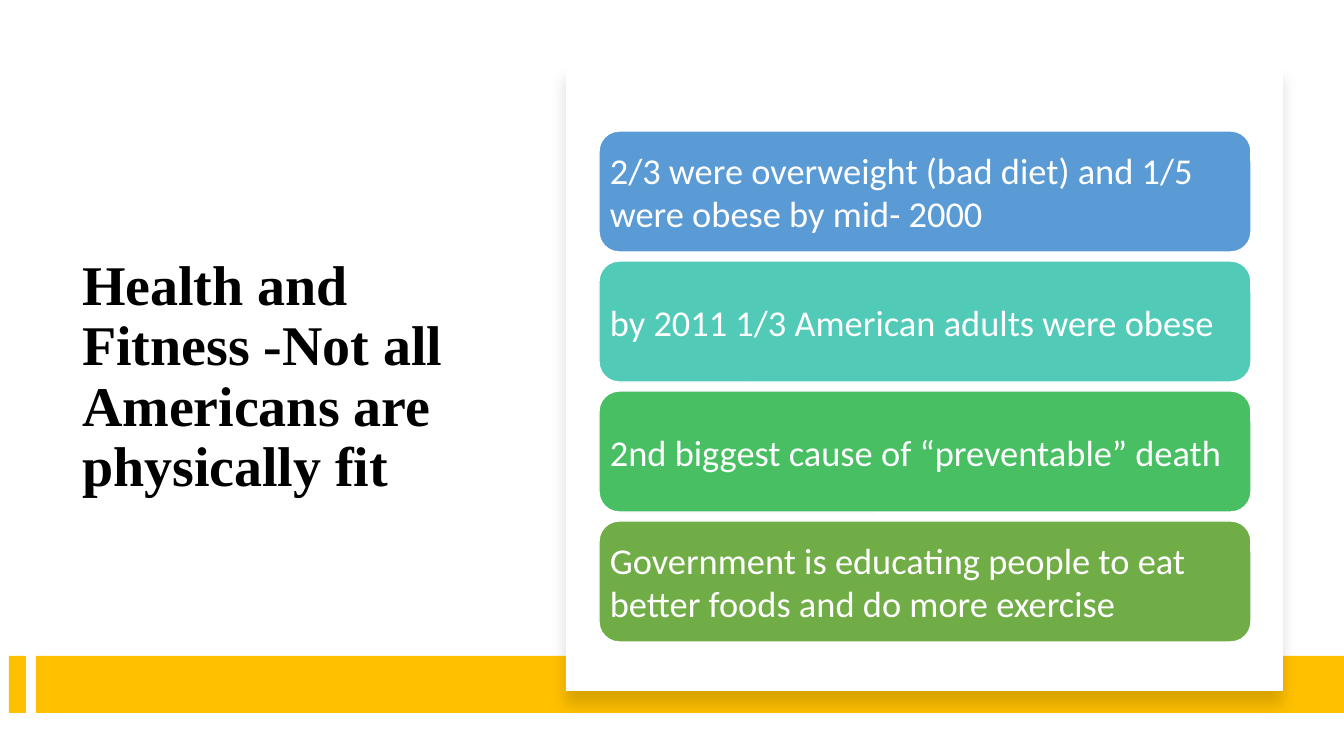
import pptx
import pptx.dml.color
import pptx.enum.shapes
import pptx.enum.text
import pptx.oxml
import pptx.oxml.ns
import pptx.util

HEADLINE = "Health and Fitness -Not all Americans are physically fit"
FACTS = [
    ("2/3 were overweight (bad diet) and 1/5 were obese by mid- 2000", "5B9BD5"),
    ("by 2011 1/3 American adults were obese", "52CAB8"),
    ("2nd biggest cause of “preventable” death", "49BF63"),
    ("Government is educating people to eat better foods and do more exercise", "71AD47"),
]
GOLD, WHITE, BLACK = "FFC000", "FFFFFF", "000000"

# Lengths in px: left, top, width, height
SLIDE_SIZE = (1344, 756)
HEADLINE_BOX = (72, 121, 418, 514)
GOLD_BARS = [(9, 656, 17, 57), (36, 656, 1308, 57)]
PANEL_BOX = (566, 65, 717, 626)
FIRST_CARD = (599, 131, 652, 121)
CARD_PITCH = 130
CARD_INSET = 5

SHAPES = pptx.enum.shapes.MSO_SHAPE
PANEL_SHADOW = (
    f'<a:effectLst {pptx.oxml.ns.nsdecls("a")}>'
    '<a:outerShdw blurRad="139700" dist="127000" dir="5400000" algn="t" rotWithShape="0">'
    '<a:srgbClr val="000000"><a:alpha val="15000"/></a:srgbClr>'
    '</a:outerShdw></a:effectLst>'
)


def px(length):
    return pptx.util.Emu(round(length * 914400 / 100.8))


def colour(value):
    return pptx.dml.color.RGBColor.from_string(value)


def add_block(slide, kind, box, fill):
    block = slide.shapes.add_shape(kind, *map(px, box))
    block.shadow.inherit = False
    block.fill.solid()
    block.fill.fore_color.rgb = colour(fill)
    block.line.fill.background()
    return block


def write(shape, text, font_name, size, text_colour, bold=False):
    frame = shape.text_frame
    frame.word_wrap = True
    frame.auto_size = pptx.enum.text.MSO_AUTO_SIZE.NONE
    frame.vertical_anchor = pptx.enum.text.MSO_ANCHOR.MIDDLE
    paragraph = frame.paragraphs[0]
    paragraph.text = text
    paragraph.alignment = pptx.enum.text.PP_ALIGN.LEFT
    paragraph.font.name = font_name
    paragraph.font.size = pptx.util.Pt(size)
    paragraph.font.bold = bold
    paragraph.font.color.rgb = colour(text_colour)
    return paragraph


def main():
    deck = pptx.Presentation()
    deck.slide_width, deck.slide_height = map(px, SLIDE_SIZE)
    slide = deck.slides.add_slide(deck.slide_layouts[5])

    # Headline
    headline = slide.shapes.title
    headline.left, headline.top, headline.width, headline.height = map(px, HEADLINE_BOX)
    write(headline, HEADLINE, "Times New Roman", 40, BLACK, bold=True).line_spacing = 0.9

    # Gold band along the bottom
    for bar in GOLD_BARS:
        add_block(slide, SHAPES.RECTANGLE, bar, GOLD)

    # White panel with a soft shadow
    panel = add_block(slide, SHAPES.RECTANGLE, PANEL_BOX, WHITE)
    properties = panel.fill._xPr
    properties.remove(properties.find(pptx.oxml.ns.qn("a:effectLst")))
    properties.append(pptx.oxml.parse_xml(PANEL_SHADOW))

    # Fact cards
    left, top, width, height = FIRST_CARD
    for row, (fact, fill) in enumerate(FACTS):
        box = (left, top + row * CARD_PITCH, width, height)
        card = add_block(slide, SHAPES.ROUNDED_RECTANGLE, box, fill)
        card.line.color.rgb = colour(WHITE)
        card.line.width = pptx.util.Pt(1)
        frame = card.text_frame
        frame.margin_left = frame.margin_right = px(CARD_INSET)
        frame.margin_top = frame.margin_bottom = px(CARD_INSET)
        write(card, fact, "Calibri", 26, WHITE)

    deck.save("out.pptx")


if __name__ == "__main__":
    main()
